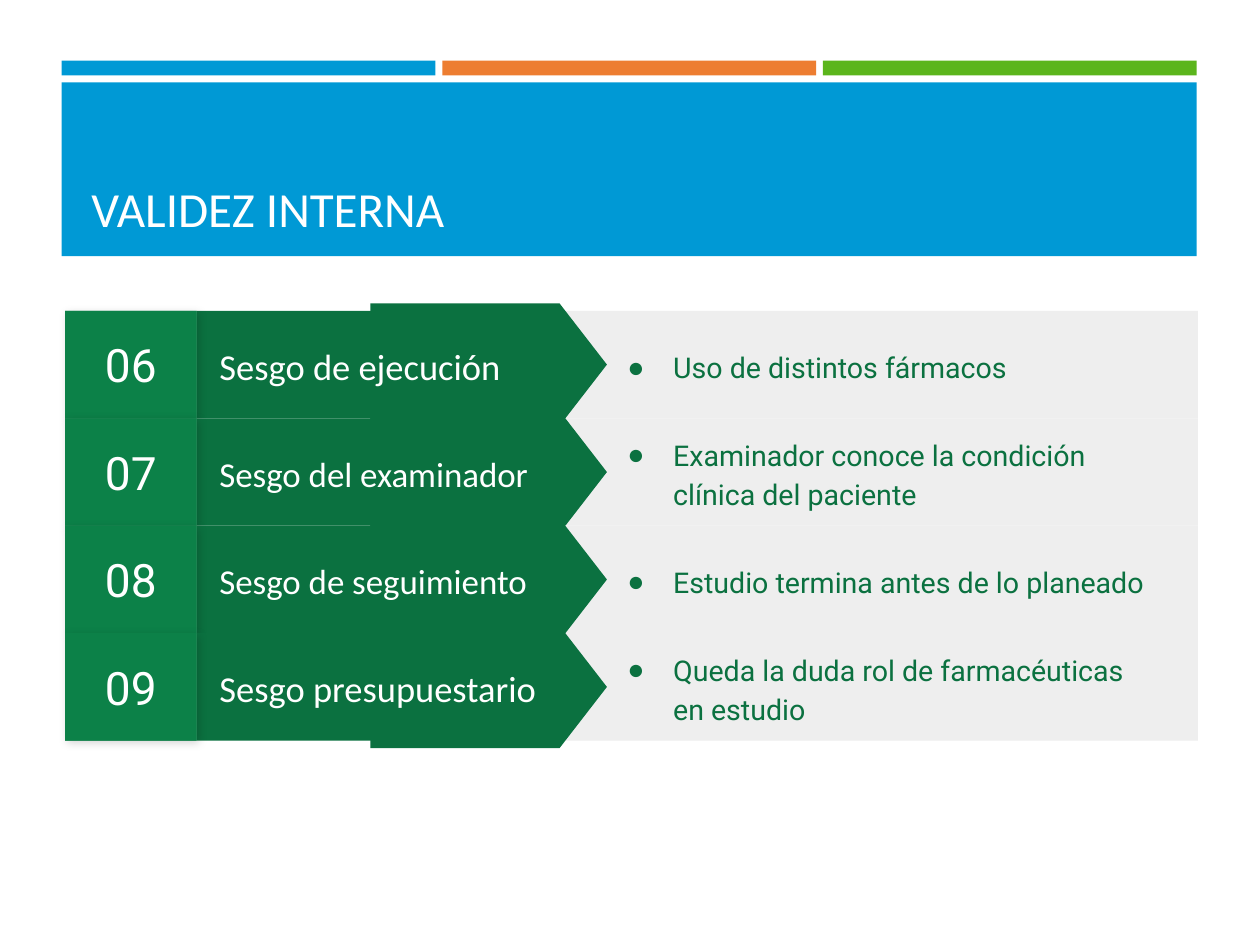
from pptx import Presentation
from pptx.dml.color import RGBColor
from pptx.enum.shapes import MSO_SHAPE
from pptx.enum.text import MSO_ANCHOR, PP_ALIGN
from pptx.oxml import parse_xml
from pptx.oxml.ns import nsdecls
from pptx.util import Inches, Pt

TITLE = "VALIDEZ INTERNA"
BIASES = [
    ("06", "Sesgo de ejecución", 23, "Uso de distintos fármacos"),
    ("07", "Sesgo del examinador", 22, "Examinador conoce la condición clínica del paciente"),
    ("08", "Sesgo de seguimiento", 22, "Estudio termina antes de lo planeado"),
    ("09", "Sesgo presupuestario", 23, "Queda la duda rol de farmacéuticas en estudio"),
]
BLUE, ORANGE, LIME = "0099D5", "ED7D31", "5BB51C"
GREEN, NUMBER_GREEN, SHADOW_GREEN = "0B7140", "0C8148", "0B7743"
GREY, WHITE = "EEEEEE", "FFFFFF"

SLIDE_WIDTH, SLIDE_HEIGHT = 28 / 2.54, 21 / 2.54
HEADER_LEFT, HEADER_WIDTH, STRIPE_GAP = 0.54, 9.93, 0.06
ROWS_TOP, ROW_HEIGHT = 2.72, 0.94
ARROW_LEFT, ARROW_LENGTH, ARROW_BREADTH = 3.24, 2.07, 1.07


def color(hex_code):
    return RGBColor.from_string(hex_code)


def add_block(left, top, width, height, fill, preset=MSO_SHAPE.RECTANGLE):
    block = slide.shapes.add_shape(
        preset, Inches(left), Inches(top), Inches(width), Inches(height))
    block.shadow.inherit = False
    block.fill.solid()
    block.fill.fore_color.rgb = color(fill)
    block.line.fill.background()
    return block


def add_label(left, top, width, height):
    return slide.shapes.add_textbox(
        Inches(left), Inches(top), Inches(width), Inches(height))


def write(holder, words, size, font, fill, anchor=MSO_ANCHOR.MIDDLE,
          align=PP_ALIGN.LEFT, inset_x=0.11, inset_y=0.11):
    frame = holder.text_frame
    frame.word_wrap = True
    frame.vertical_anchor = anchor
    frame.margin_left = frame.margin_right = Inches(inset_x)
    frame.margin_top = frame.margin_bottom = Inches(inset_y)
    paragraph = frame.paragraphs[0]
    paragraph.alignment = align
    run = paragraph.add_run()
    run.text = words
    run.font.size = Pt(size)
    run.font.name = font
    run.font.color.rgb = color(fill)
    return paragraph


def add_bullet(paragraph):
    properties = paragraph._p.get_or_add_pPr()
    properties.set("marL", str(Inches(0.56)))
    properties.set("indent", str(Inches(-0.4)))
    for markup in (
        f'<a:buClr {nsdecls("a")}><a:srgbClr val="{GREEN}"/></a:buClr>',
        f'<a:buFont {nsdecls("a")} typeface="Arial"/>',
        f'<a:buChar {nsdecls("a")} char="●"/>',
    ):
        properties.append(parse_xml(markup))


def add_shadow(block):
    effects = block.element.spPr.find(
        "{http://schemas.openxmlformats.org/drawingml/2006/main}effectLst")
    effects.append(parse_xml(
        f'<a:outerShdw {nsdecls("a")} blurRad="{Pt(5.6)}" dist="{Pt(2.2)}" '
        'dir="2700000" algn="tl" rotWithShape="0"><a:srgbClr val="000000">'
        '<a:alpha val="17000"/></a:srgbClr></a:outerShdw>'))


def add_header():
    title = slide.shapes.title
    title.left, title.top = Inches(0.7), Inches(0.82)
    title.width, title.height = Inches(9.63), Inches(1.31)
    write(title, TITLE, 30.9, "Calibri", WHITE, MSO_ANCHOR.BOTTOM,
          inset_x=0.1, inset_y=0.05)
    stripe_width = (HEADER_WIDTH - 2 * STRIPE_GAP) / 3
    header = [
        add_block(HEADER_LEFT + i * (stripe_width + STRIPE_GAP), 0.53,
                  stripe_width, 0.13, fill)
        for i, fill in enumerate((BLUE, ORANGE, LIME))
    ]
    header.append(add_block(HEADER_LEFT, 0.72, HEADER_WIDTH, 1.52, BLUE))
    for block in header:
        title.element.addprevious(block.element)


def add_bias(top, number, name, name_size, detail):
    middle = top + ROW_HEIGHT / 2
    add_block(4.12, top, 6.36, ROW_HEIGHT, GREY)
    add_block(1.72, top, 3.07, ROW_HEIGHT, GREEN)
    arrow = add_block(
        ARROW_LEFT + (ARROW_LENGTH - ARROW_BREADTH) / 2, middle - ARROW_LENGTH / 2,
        ARROW_BREADTH, ARROW_LENGTH, GREEN, MSO_SHAPE.FLOWCHART_OFFPAGE_CONNECTOR)
    arrow.rotation = 270

    name_line = write(add_label(1.81, top + 0.12, 3.23, 0.72),
                      name, name_size, "Calibri", WHITE)
    name_line.space_before, name_line.space_after = Pt(3.6), Pt(6.6)

    add_shadow(add_block(0.57, top, 1.15, ROW_HEIGHT, SHADOW_GREEN))
    number_box = add_block(0.57, top, 1.15, ROW_HEIGHT, NUMBER_GREEN)
    write(number_box, number, 29, "Roboto", WHITE, align=PP_ALIGN.CENTER)

    detail_line = write(add_label(5.22, top, 4.94, ROW_HEIGHT),
                        detail, 18, "Roboto", GREEN)
    detail_line.line_spacing = 1.15
    add_bullet(detail_line)


deck = Presentation()
deck.slide_width, deck.slide_height = Inches(SLIDE_WIDTH), Inches(SLIDE_HEIGHT)
slide = deck.slides.add_slide(deck.slide_layouts[5])
add_header()
for row, bias in enumerate(BIASES):
    add_bias(ROWS_TOP + row * ROW_HEIGHT, *bias)
deck.save("out.pptx")
